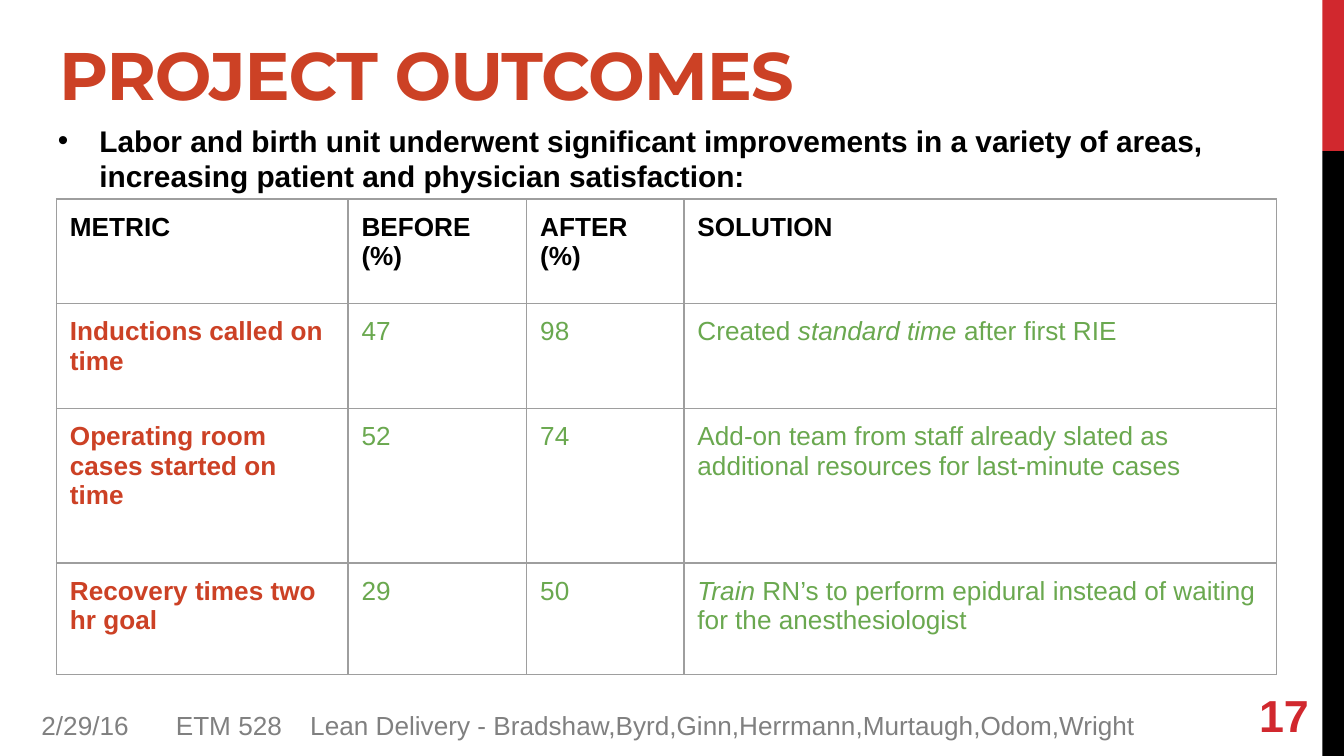
from lxml import etree
from pptx import Presentation
from pptx.dml.color import RGBColor
from pptx.enum.shapes import MSO_SHAPE
from pptx.enum.text import MSO_ANCHOR, MSO_AUTO_SIZE, PP_ALIGN
from pptx.oxml.ns import qn
from pptx.util import Inches, Pt

RECTANGLE = MSO_SHAPE.RECTANGLE
TOP, MIDDLE = MSO_ANCHOR.TOP, MSO_ANCHOR.MIDDLE
LEFT = PP_ALIGN.LEFT
NO_AUTOFIT = MSO_AUTO_SIZE.NONE

# 16:9 page
PAGE_WIDTH = Inches(10)
PAGE_HEIGHT = PAGE_WIDTH * 9 // 16

COLORS = {
    "red": "D1282E",
    "black": "000000",
    "rust": "CC4125",
    "green": "6AA84F",
    "gray": "808080",
    "border": "9E9E9E",
}

# Text formats
TITLE = {"name": "Montserrat", "size": 36, "color": "rust", "bold": True}
BULLET = {"name": "Arial", "size": 16, "color": "black", "bold": True}
HEADER = {**BULLET, "size": 14}
METRIC = {**HEADER, "color": "rust"}
VALUE = {**HEADER, "color": "green", "bold": False}
NUMBER = {**BULLET, "size": 24, "color": "red"}
FOOTER = {**VALUE, "color": "gray"}

# Each solution is a list of (text, italic) spans
HEADINGS = ["METRIC", "BEFORE (%)", "AFTER (%)", "SOLUTION"]
OUTCOMES = [
    ("Inductions called on time", "47", "98",
     [("Created ", False), ("standard time", True), (" after first RIE", False)]),
    ("Operating room cases started on time", "52", "74",
     [("Add-on team from staff already slated as additional resources "
       "for last-minute cases", False)]),
    ("Recovery times two hr goal", "29", "50",
     [("Train ", True),
      ("RN’s to perform epidural instead of waiting for the anesthesiologist",
       False)]),
]
COLUMN_WIDTHS = [2.17, 1.33, 1.17, 4.41]
ROW_HEIGHTS = [0.78, 0.78, 1.15, 0.83]


def rgb(color):
    return RGBColor.from_string(COLORS[color])


def add_span(para, text, style, italic=False):
    span = para.add_run()
    span.text = text
    values = {**style, "size": Pt(style["size"]), "italic": italic}
    span.font.color.rgb = rgb(values.pop("color"))
    for key, value in values.items():
        setattr(span.font, key, value)
    return span


def set_frame(frame, inset_y=0.1, anchor=TOP):
    values = {
        "word_wrap": True,
        "auto_size": NO_AUTOFIT,
        "vertical_anchor": anchor,
        "margin_left": Inches(0.1),
        "margin_right": Inches(0.1),
        "margin_top": Inches(inset_y),
        "margin_bottom": Inches(inset_y),
    }
    for key, value in values.items():
        setattr(frame, key, value)


def place(shape, left, top, width, height):
    shape.left, shape.top = Inches(left), Inches(top)
    shape.width, shape.height = Inches(width), Inches(height)


def add_bar(page, color, top, height):
    bar = page.shapes.add_shape(
        RECTANGLE, Inches(9.84), top, Inches(0.16), height)
    bar.shadow.inherit = False
    bar.fill.solid()
    bar.fill.fore_color.rgb = rgb(color)
    bar.line.fill.background()


def fill_title(page, text):
    title = page.shapes.title
    place(title, 0.34, 0.15, 9.32, 0.63)
    set_frame(title.text_frame)
    para = title.text_frame.paragraphs[0]
    para.alignment = LEFT
    span = add_span(para, text, TITLE)
    span.font._element.set("spc", "-60")


def fill_body(page, text):
    body = page.placeholders[1]
    place(body, 0.33, 0.81, 9.32, 3.74)
    set_frame(body.text_frame)
    para = body.text_frame.paragraphs[0]
    para.space_before, para.space_after = Pt(0), Pt(6)
    para.line_spacing = 1.0
    add_span(para, text, BULLET)
    # Hanging bullet
    properties = para._p.get_or_add_pPr()
    properties.set("marL", str(Inches(0.31)))
    properties.set("indent", str(Inches(-0.31)))
    etree.SubElement(properties, qn("a:buChar"), char="•")


def add_text(page, text, style, box, inset_y=0.1, anchor=TOP):
    text_box = page.shapes.add_textbox(*map(Inches, box))
    set_frame(text_box.text_frame, inset_y, anchor)
    add_span(text_box.text_frame.paragraphs[0], text, style)


def set_borders(cell):
    properties = cell._tc.get_or_add_tcPr()
    for position, side in enumerate(("lnL", "lnR", "lnT", "lnB")):
        line = etree.Element(qn(f"a:{side}"), w=str(Pt(0.75)))
        fill = etree.SubElement(line, qn("a:solidFill"))
        etree.SubElement(fill, qn("a:srgbClr"), val=COLORS["border"])
        properties.insert(position, line)


def fill_cell(cell, spans, style):
    cell.fill.background()
    set_borders(cell)
    for side in ("left", "right", "top", "bottom"):
        setattr(cell, f"margin_{side}", Inches(0.1))
    para = cell.text_frame.paragraphs[0]
    for text, italic in spans:
        add_span(para, text, style, italic)


def add_outcomes_table(page):
    table = page.shapes.add_table(
        len(ROW_HEIGHTS), len(COLUMN_WIDTHS), Inches(0.42), Inches(1.48),
        Inches(sum(COLUMN_WIDTHS)), Inches(sum(ROW_HEIGHTS))).table
    table.first_row = table.horz_banding = False
    for column, width in zip(table.columns, COLUMN_WIDTHS):
        column.width = Inches(width)
    for row, height in zip(table.rows, ROW_HEIGHTS):
        row.height = Inches(height)
    for row_index, row in enumerate([HEADINGS, *OUTCOMES]):
        for column_index, content in enumerate(row):
            if row_index == 0:
                style = HEADER
            else:
                style = VALUE if column_index else METRIC
            spans = [(content, False)] if isinstance(content, str) else content
            fill_cell(table.cell(row_index, column_index), spans, style)


def main():
    deck = Presentation()
    deck.slide_width, deck.slide_height = PAGE_WIDTH, PAGE_HEIGHT
    page = deck.slides.add_slide(deck.slide_layouts[1])

    # Side bars: the red one takes a fifth of the height
    red_height = PAGE_HEIGHT // 5
    add_bar(page, "red", 0, red_height)
    add_bar(page, "black", red_height, PAGE_HEIGHT - red_height)

    # Title, bullet and table
    fill_title(page, "PROJECT OUTCOMES")
    fill_body(page, "Labor and birth unit underwent significant improvements in "
                    "a variety of areas, increasing patient and physician "
                    "satisfaction:")
    add_outcomes_table(page)

    # Page number and footer
    add_text(page, "17", NUMBER, (9.27, 5.1, 0.6, 0.43), anchor=MIDDLE)
    add_text(page, "2/29/16\tETM 528 \tLean Delivery - "
                   "Bradshaw,Byrd,Ginn,Herrmann,Murtaugh,Odom,Wright",
             FOOTER, (0.21, 5.23, 9.42, 0.34), inset_y=0.05)

    deck.save("out.pptx")


if __name__ == "__main__":
    main()
